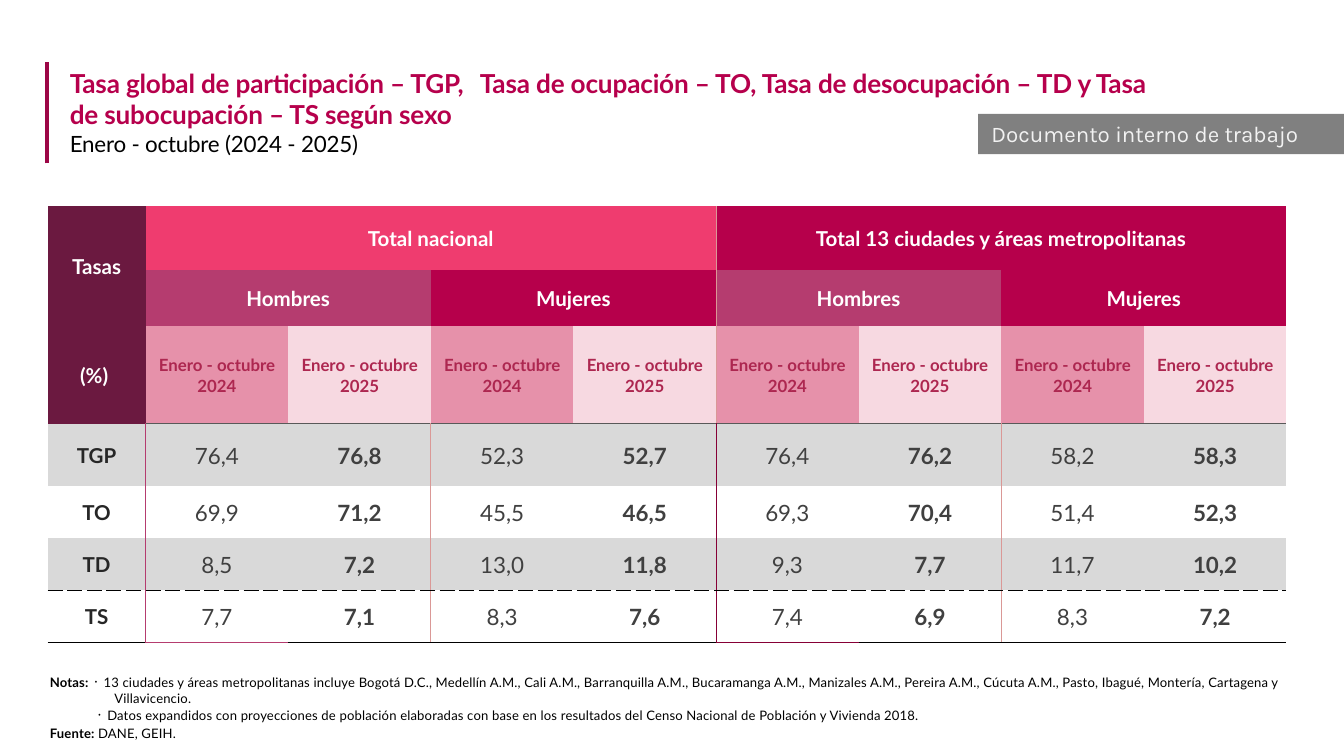
from dataclasses import dataclass

from lxml import etree
from pptx import Presentation
from pptx.dml.color import RGBColor
from pptx.enum import shapes, text
from pptx.oxml import ns
from pptx.util import Pt


@dataclass(frozen=True)
class Theme:
    font: str = "Lato"
    tag_font: str = "Karla"
    black: str = "000000"
    white: str = "FFFFFF"
    title: str = "B6004C"
    accent: str = "9C0646"
    plum: str = "6B1940"
    pink: str = "EF3C6F"
    crimson: str = "B6004B"
    mauve: str = "B53C6F"
    rose: str = "E691AA"
    blush: str = "F7D9E1"
    period: str = "AD2750"
    band: str = "D9D9D9"
    label: str = "262626"
    value: str = "404040"
    rule: str = "595959"
    salmon: str = "DA9896"
    wine: str = "860036"
    tag: str = "808080"
    tag_text: str = "F2F2F2"
    sz_title: float = 14
    sz_body: float = 12
    sz_head: float = 11
    sz_period: float = 9
    sz_note: float = 7


T = Theme()
NO_STYLE = "{2D5ABB26-0587-4C30-8999-92F81FD0307C}"
COLS = [52.5] + [76.4] * 8
ROWS = [34.3, 30, 52.5, 33.2, 27.9, 27.9, 27.9]
HEAD = 3  # header rows
RATES = [
    ("TGP", "76,4 76,8 52,3 52,7 76,4 76,2 58,2 58,3"),
    ("TO", "69,9 71,2 45,5 46,5 69,3 70,4 51,4 52,3"),
    ("TD", "8,5 7,2 13,0 11,8 9,3 7,7 11,7 10,2"),
    ("TS", "7,7 7,1 8,3 7,6 7,4 6,9 8,3 7,2"),
]


def rgb(value):
    return RGBColor.from_string(value)


def add_run(p, words, size, color, bold=False, font=T.font, spacing=0):
    r = p.add_run()
    r.text = words
    r.font.name, r.font.size, r.font.bold = font, Pt(size), bold
    r.font.color.rgb = rgb(color)
    if spacing:
        r._r.get_or_add_rPr().set("spc", str(round(spacing * 100)))


def add_textbox(s, box, insets, anchor):
    tf = s.shapes.add_textbox(*map(Pt, box)).text_frame
    tf.word_wrap = True
    tf.auto_size = text.MSO_AUTO_SIZE.SHAPE_TO_FIT_TEXT
    tf.vertical_anchor = anchor
    tf.margin_left, tf.margin_top, tf.margin_right, tf.margin_bottom = map(Pt, insets)
    return tf


def add_title(s, x, y, w, h):
    # Vertical accent line
    line = s.shapes.add_connector(shapes.MSO_CONNECTOR.STRAIGHT,
                                  Pt(x), Pt(y + h), Pt(x), Pt(y))
    line.line.color.rgb, line.line.width = rgb(T.accent), Pt(2)
    etree.SubElement(line._element.spPr, ns.qn("a:effectLst"))
    # Title and period
    tf = add_textbox(s, (x + 7.2, y, w, h), (5, 2.9, 5, 2.9), text.MSO_ANCHOR.TOP)
    p = tf.paragraphs[0]
    for words, spacing in (
            ("Tasa global de participación – TGP,", -0.1),
            (" ", 5.2),  # wide gap after the first rate
            ("Tasa de ocupación – TO, Tasa de desocupación – TD y Tasa "
             "de subocupación – TS según sexo", -0.1)):
        add_run(p, words, T.sz_title, T.title, True, spacing=spacing)
    add_run(tf.add_paragraph(), "Enero - octubre (2024 - 2025)",
            T.sz_body, T.black, spacing=-0.1)


def add_tag(s, x, y, w, h):
    sp = s.shapes.add_shape(shapes.MSO_SHAPE.RECTANGLE, *map(Pt, (x, y, w, h)))
    sp.shadow.inherit = False
    sp.fill.solid()
    sp.fill.fore_color.rgb = rgb(T.tag)
    sp.line.fill.background()
    tf = sp.text_frame
    tf.vertical_anchor = text.MSO_ANCHOR.TOP
    p = tf.paragraphs[0]
    p.alignment = text.PP_ALIGN.LEFT
    add_run(p, "Documento interno de trabajo", T.sz_body, T.tag_text, font=T.tag_font)


def vertical_rule(row, edge):
    """Colour of the rule on a column edge, or None."""
    if row < HEAD:
        return T.salmon if edge == 4 + 1 else None
    return {1: T.mauve, 3: T.salmon, 5: T.wine, 7: T.salmon}.get(edge)


def horizontal_rule(edge, col):
    """Colour of the rule on a row edge, or None."""
    if edge == HEAD:
        return T.rule if col else None
    if edge == len(ROWS) - 1:
        return T.black
    if edge == len(ROWS):
        return {1: T.mauve, 5: T.wine}.get(col, T.black)
    return None


def set_border(cell, side, color, dashed=False):
    ln = etree.SubElement(cell._tc.get_or_add_tcPr(), ns.qn("a:ln" + side), w=str(Pt(0.5)))
    if color is None:
        etree.SubElement(ln, ns.qn("a:noFill"))
        return
    fill = etree.SubElement(ln, ns.qn("a:solidFill"))
    etree.SubElement(fill, ns.qn("a:srgbClr"), val=color)
    etree.SubElement(ln, ns.qn("a:prstDash"), val="dash" if dashed else "solid")


def cell_content(row, col):
    """Words, fill, size, text colour and weight of one cell."""
    if row < HEAD:
        if col == 0:
            return ["Tasas", "", "(%) "][row], T.plum, T.sz_head, T.white, True
        if row == 0:
            words = {1: "Total nacional", 5: "Total 13 ciudades y áreas metropolitanas"}
            return words.get(col, ""), T.pink if col < 5 else T.crimson, T.sz_head, T.white, True
        if row == 1:
            men = (col - 1) % 4 < 2
            words = ("Hombres" if men else "Mujeres") if col % 2 else ""
            return words, T.mauve if men else T.crimson, T.sz_head, T.white, True
        year, fill = ("2024", T.rose) if col % 2 else ("2025", T.blush)
        return f"Enero - octubre {year}", fill, T.sz_period, T.period, True
    name, values = RATES[row - HEAD]
    fill = T.white if (row - HEAD) % 2 else T.band
    if col == 0:
        return name, fill, T.sz_head, T.label, True
    return values.split()[col - 1], fill, T.sz_body, T.value, col % 2 == 0


def add_rates_table(s, x, y):
    table = s.shapes.add_table(len(ROWS), len(COLS), Pt(x), Pt(y),
                               Pt(sum(COLS)), Pt(sum(ROWS))).table
    table.first_row = table.horz_banding = False
    table._tbl.tblPr.find(ns.qn("a:tableStyleId")).text = NO_STYLE
    for column, width in zip(table.columns, COLS):
        column.width = Pt(width)
    for line, height in zip(table.rows, ROWS):
        line.height = Pt(height)

    # Header spans
    table.cell(0, 0).merge(table.cell(1, 0))
    for row, span in ((0, 4), (1, 2)):
        for col in range(1, len(COLS), span):
            table.cell(row, col).merge(table.cell(row, col + span - 1))

    for row in range(len(ROWS)):
        for col in range(len(COLS)):
            cell = table.cell(row, col)
            right, bottom = col + cell.span_width, row + cell.span_height
            set_border(cell, "L", vertical_rule(row, col))
            set_border(cell, "R", vertical_rule(row, right))
            for side, edge in (("T", row), ("B", bottom)):
                set_border(cell, side, horizontal_rule(edge, col), edge == len(ROWS) - 1)
            words, fill, size, color, bold = cell_content(row, col)
            cell.fill.solid()
            cell.fill.fore_color.rgb = rgb(fill)
            cell.vertical_anchor = text.MSO_ANCHOR.MIDDLE
            cell.margin_left = cell.margin_top = cell.margin_right = Pt(0.7)
            cell.margin_bottom = 0
            if words:
                p = cell.text_frame.paragraphs[0]
                p.alignment = text.PP_ALIGN.CENTER
                add_run(p, words, size, color, bold)


def add_notes(s, x, y, w, h):
    tf = add_textbox(s, (x, y, w, h), (0, 0.7, 0, 0), text.MSO_ANCHOR.BOTTOM)
    notes = [  # left margin, first-line indent, bold lead, words
        (35.3, -34.6, "Notas: ",
         "᛫ 13 ciudades y áreas metropolitanas incluye Bogotá D.C., Medellín A.M., "
         "Cali A.M., Barranquilla A.M., Bucaramanga A.M., Manizales A.M., Pereira A.M., "
         "Cúcuta A.M., Pasto, Ibagué, Montería, Cartagena y Villavicencio."),
        (35.3, -10, "",
         "᛫ Datos expandidos con proyecciones de población elaboradas con base en los "
         "resultados del Censo Nacional de Población y Vivienda 2018."),
        (0.7, 0, "Fuente: ", "DANE, GEIH."),
    ]
    for i, (margin, indent, lead, words) in enumerate(notes):
        p = tf.add_paragraph() if i else tf.paragraphs[0]
        pPr = p._p.get_or_add_pPr()
        pPr.set("marL", str(Pt(margin)))
        pPr.set("indent", str(Pt(indent)))
        p.line_spacing = 1.04
        p.space_before = Pt(0.6 if i else 0)
        if lead:
            add_run(p, lead, T.sz_note, T.black, True, spacing=0.1)
        add_run(p, words, T.sz_note, T.black, spacing=0.1)


def main():
    prs = Presentation()
    prs.slide_width, prs.slide_height = Pt(720), Pt(405)
    s = prs.slides.add_slide(prs.slide_layouts[6])
    add_notes(s, 26, 358.6, 669, 38.2)
    add_title(s, 25.2, 33.1, 598.3, 54.5)
    add_rates_table(s, 25.5, 110.3)
    add_tag(s, 524, 61, 196, 21.6)
    prs.save("out.pptx")


if __name__ == "__main__":
    main()
